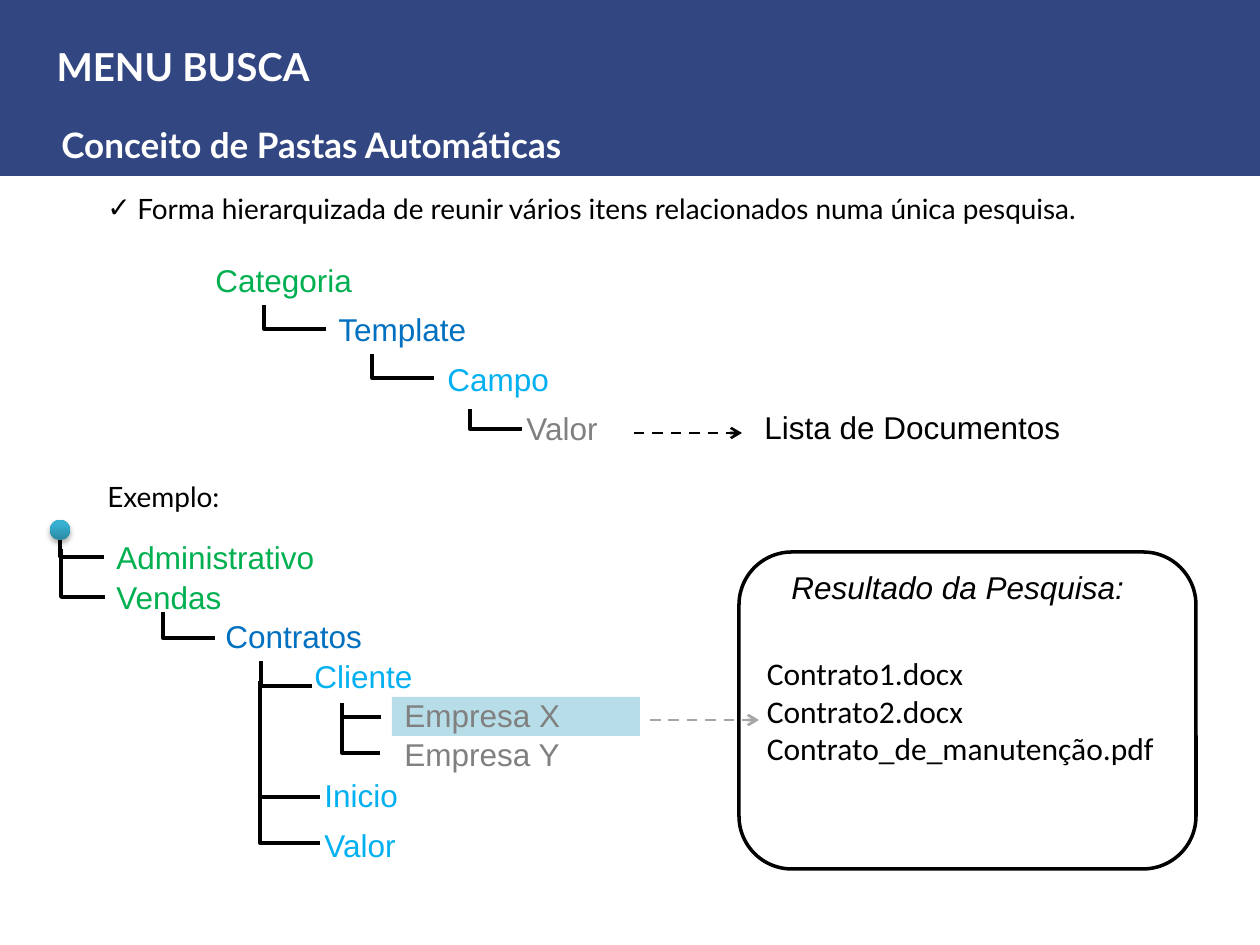
"""Builds the slide on automatic folders of the search menu."""
from lxml import etree
from pptx import Presentation, util as u
from pptx.dml.color import RGBColor
from pptx.enum import dml, shapes, text
from pptx.oxml import parse_xml
from pptx.oxml.ns import nsdecls, qn

BLACK, WHITE, GREY = "000000", "FFFFFF", "808080"
GREEN, BLUE, CYAN = "00B050", "0070C0", "00B0F0"
TITLE = ("MENU BUSCA", (44, 37, 1033, 59))
SUBTITLE = ("Conceito de Pastas Automáticas", (49, 98, 837, 74))
NOTES = [
    ("Forma hierarquizada de reunir vários itens relacionados numa única pesquisa.", 185, "✓"),
    ("Exemplo:", 473, None),
]
LABELS = [
    ("Categoria", 203, 255, 164, GREEN),
    ("Template", 326, 304, 155, BLUE),
    ("Campo", 435, 354, 137, CYAN),
    ("Valor", 514, 403, 106, GREY),
    ("Lista de Documentos", 752, 402, 324, BLACK),
    ("Administrativo", 104, 532, 226, GREEN),
    ("Vendas", 104, 572, 131, GREEN),
    ("Contratos", 213, 611, 164, BLUE),
    ("Cliente", 302, 651, 125, CYAN),
    ("Empresa X", 392, 690, 183, GREY),
    ("Empresa Y", 392, 729, 183, GREY),
    ("Inicio", 312, 770, 100, CYAN),
    ("Valor", 312, 820, 97, CYAN),
]
BRANCHES = [
    (264, 305, 326, 329), (372, 354, 434, 378), (470, 409, 522, 429),
    (60, 530, 104, 557), (61, 549, 105, 597), (163, 612, 215, 638),
    (261, 661, 312, 686), (342, 703, 381, 717), (342, 712, 380, 753),
    (260, 681, 320, 797), (260, 797, 320, 843),
]
ARROWS = [(634, 742, 433, BLACK), (650, 759, 720, "A6A6A6")]
RESULTS = ["Contrato1.docx", "Contrato2.docx", "Contrato_de_manutenção.pdf"]


def px(n):
    return u.Emu(round(n * 914400 / 126))


def rgb(value):
    return RGBColor.from_string(value)


def add_run(p, words, font, size, color, bold=False, italic=False):
    r = p.add_run()
    r.text = words
    r.font.name, r.font.size = font, u.Pt(size)
    r.font.color.rgb = rgb(color)
    r.font.bold, r.font.italic = bold, italic


def add_text(s, box, words, font, size, color, wrap=True, **style):
    sp = s.shapes.add_textbox(*map(px, box))
    tf = sp.text_frame
    tf.word_wrap = wrap
    tf.auto_size = text.MSO_AUTO_SIZE.SHAPE_TO_FIT_TEXT
    p = tf.paragraphs[0]
    add_run(p, words, font, size, color, **style)
    return p


def add_box(s, kind, box, fill=None):
    sp = s.shapes.add_shape(kind, *map(px, box))
    sp.shadow.inherit = False
    sp.line.fill.background()
    if fill:
        sp.fill.solid()
        sp.fill.fore_color.rgb = rgb(fill)
    return sp


def add_line(s, kind, ends, color, width):
    c = s.shapes.add_connector(kind, *map(px, ends))
    c.line.color.rgb, c.line.width = rgb(color), u.Pt(width)
    etree.SubElement(c._element.spPr, qn("a:effectLst"))
    return c


def add_branch(s, ends):
    c = add_line(s, shapes.MSO_CONNECTOR.ELBOW, ends, BLACK, 2.25)
    guides = c._element.spPr.find(qn("a:prstGeom")).get_or_add_avLst()
    etree.SubElement(guides, qn("a:gd"), name="adj1", fmla="val 0")


def add_arrow(s, x1, x2, y, color):
    c = add_line(s, shapes.MSO_CONNECTOR.STRAIGHT, (x1, y, x2, y), color, 1.5)
    c.line.dash_style = dml.MSO_LINE.DASH
    etree.SubElement(c.line._get_or_add_ln(), qn("a:tailEnd"), type="arrow")


def add_bullet(p, mark):
    pPr = p._p.get_or_add_pPr()
    pPr.set("marL", str(px(30)))
    pPr.set("indent", str(-px(30)))
    etree.SubElement(pPr, qn("a:buFont"), typeface="Arial")
    etree.SubElement(pPr, qn("a:buChar"), char=mark)


def add_root(s):
    sp = add_box(s, shapes.MSO_SHAPE.OVAL, (50, 520, 20, 20))
    sp.fill.gradient()
    sp.fill.gradient_angle = 90
    for stop, (position, color) in zip(sp.fill.gradient_stops, [(0, "2A88A2"), (0.8, "37B1D2")]):
        stop.position, stop.color.rgb = position, rgb(color)
    sp._element.spPr.find(qn("a:effectLst")).append(parse_xml(
        f'<a:outerShdw {nsdecls("a")} blurRad="39370" dist="22860" dir="5400000" rotWithShape="0">'
        '<a:srgbClr val="000000"><a:alpha val="35000"/></a:srgbClr></a:outerShdw>'))


def add_title(s):
    words, box = TITLE
    sp = s.shapes.title
    sp.left, sp.top, sp.width, sp.height = map(px, box)
    tf = sp.text_frame
    tf.auto_size = text.MSO_AUTO_SIZE.NONE
    tf.vertical_anchor = text.MSO_ANCHOR.MIDDLE
    tf.paragraphs[0].alignment = text.PP_ALIGN.LEFT
    add_run(tf.paragraphs[0], words, "Lato", 22, WHITE, bold=True)


def add_results(s):
    sp = add_box(s, shapes.MSO_SHAPE.ROUNDED_RECTANGLE, (739, 552, 457, 317), WHITE)
    sp.line.color.rgb, sp.line.width = rgb(BLACK), u.Pt(2)
    tf = sp.text_frame
    tf.vertical_anchor = text.MSO_ANCHOR.MIDDLE
    for i, name in enumerate(RESULTS):
        p = tf.add_paragraph() if i else tf.paragraphs[0]
        p.alignment = text.PP_ALIGN.LEFT
        add_run(p, name, "Calibri", 18, BLACK)
    add_text(s, (779, 562, 377, 50), "Resultado da Pesquisa:", "Arial", 18, BLACK, italic=True)


def main():
    prs = Presentation()
    prs.slide_width, prs.slide_height = px(1260), px(945)
    s = prs.slides.add_slide(prs.slide_layouts[5])
    band = add_box(s, shapes.MSO_SHAPE.RECTANGLE, (0, 0, 1260, 176), "324682")
    s.shapes._spTree.insert(2, band._element)
    add_title(s)
    words, box = SUBTITLE
    add_text(s, box, words, "Lato", 20, WHITE, bold=True).line_spacing = u.Pt(35)
    add_box(s, shapes.MSO_SHAPE.RECTANGLE, (392, 697, 248, 39), "B7DEE8")
    for words, top, mark in NOTES:
        p = add_text(s, (95, top, 1082, 47), words, "Lato", 16, BLACK)
        if mark:
            add_bullet(p, mark)
    for words, left, top, width, color in LABELS:
        add_text(s, (left, top, width, 50), words, "Arial", 18, color, wrap=False)
    add_results(s)
    for ends in BRANCHES:
        add_branch(s, ends)
    for arrow in ARROWS:
        add_arrow(s, *arrow)
    add_root(s)
    prs.save("out.pptx")


if __name__ == "__main__":
    main()
